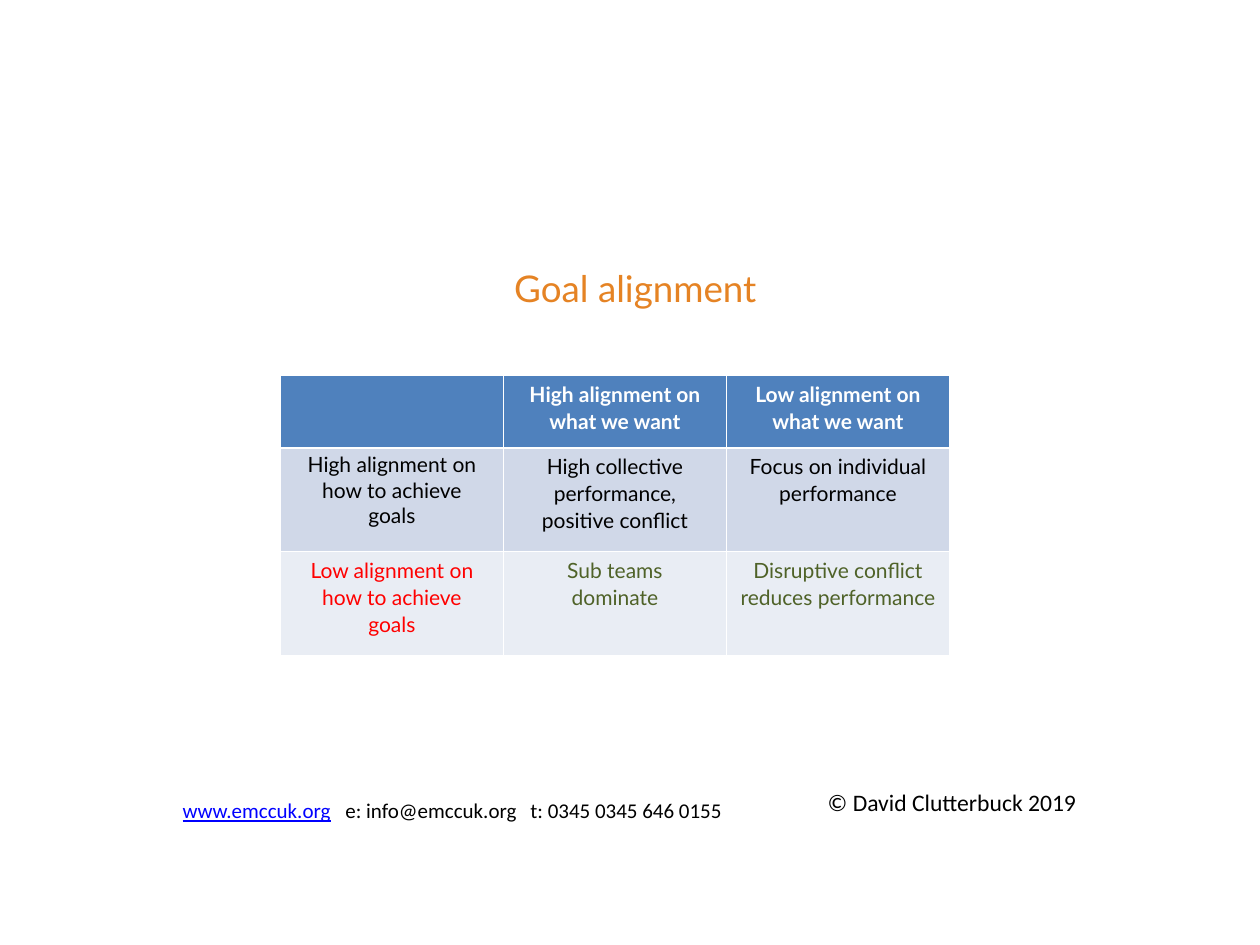
from lxml import etree
from pptx import Presentation
from pptx.dml.color import RGBColor
from pptx.enum.text import PP_ALIGN as Align
from pptx.oxml import parse_xml
from pptx.oxml.ns import nsdecls, qn
from pptx.util import Pt

TITLE = "Goal alignment"
COPYRIGHT = "© David Clutterbuck 2019"
WEBSITE = "www.emccuk.org"
CONTACTS = ["e: info@emccuk.org", "t: 0345 0345 646 0155"]
CONTACT_STOPS = [186, 397.5]

GOALS = [
    ["", "High alignment on\vwhat we want", "Low alignment on\vwhat we want"],
    ["High alignment on\vhow to achieve\vgoals",
     "High collective\vperformance,\vpositive conflict",
     "Focus on individual\vperformance"],
    ["Low alignment on\vhow to achieve\vgoals",
     "Sub teams\vdominate",
     "Disruptive conflict\vreduces performance"],
]
ROW_FILLS = ["4F81BD", "D0D8E8", "E9EDF4"]
TEXT_COLOURS = [["FFFFFF"] * 3, ["000000"] * 3, ["FF0000", "4F6228", "4F6228"]]
ROW_HEIGHTS = [82.8, 118.8, 118.8]
COLUMN_WIDTH = 254.9


def colour(value):
    return RGBColor.from_string(value)


def style(font, face, size, value, bold=False, underline=False):
    font.name, font.size = face, Pt(size)
    font.bold, font.underline = bold, underline
    font.color.rgb = colour(value)


def add_text(slide, left, top, width, height, text):
    frame = slide.shapes.add_textbox(Pt(left), Pt(top), Pt(width), Pt(height)).text_frame
    frame.word_wrap = True
    frame.text = text
    return frame.paragraphs[0]


def add_borders(cell, row):
    properties = cell._tc.get_or_add_tcPr()
    widths = {"lnL": 1, "lnR": 1, "lnT": 3 if row == 1 else 1, "lnB": 3 if row == 0 else 1}
    for position, (side, width) in enumerate(widths.items()):
        properties.insert(position, parse_xml(
            f'<a:{side} {nsdecls("a")} w="{Pt(width)}"><a:solidFill>'
            f'<a:srgbClr val="FFFFFF"/></a:solidFill></a:{side}>'))


def add_goals(slide):
    goals = slide.shapes.add_table(
        len(GOALS), len(GOALS[0]), Pt(320.4), Pt(429.1),
        Pt(COLUMN_WIDTH * len(GOALS[0])), Pt(sum(ROW_HEIGHTS))).table
    for column in goals.columns:
        column.width = Pt(COLUMN_WIDTH)
    for row, texts in enumerate(GOALS):
        goals.rows[row].height = Pt(ROW_HEIGHTS[row])
        for column, text in enumerate(texts):
            cell = goals.cell(row, column)
            cell.fill.solid()
            cell.fill.fore_color.rgb = colour(ROW_FILLS[row])
            cell.margin_left = cell.margin_right = Pt(10.8)
            cell.margin_top = cell.margin_bottom = Pt(5)
            add_borders(cell, row)
            cell.text_frame.text = text
            goal = cell.text_frame.paragraphs[0]
            goal.alignment = Align.CENTER
            goal.line_spacing = 1.0 if (row, column) == (1, 0) else 1.07
            goal.space_after = Pt(8)
            for run in goal.runs:
                style(run.font, "Lato", 24, TEXT_COLOURS[row][column], bold=row == 0)


def add_contacts(slide):
    contacts = add_text(slide, 201.6, 907.9, 714.2, 36, WEBSITE)
    stops = etree.SubElement(contacts._p.get_or_add_pPr(), qn("a:tabLst"))
    for stop in CONTACT_STOPS:
        etree.SubElement(stops, qn("a:tab"), pos=str(Pt(stop)), algn="l")
    style(contacts.runs[0].font, "Calibri", 24, "0000FF", underline=True)
    for contact in CONTACTS:
        run = contacts.add_run()
        run.text = "\t" + contact
        style(run.font, "Calibri", 24, "000000")


def main():
    deck = Presentation()
    deck.slide_width, deck.slide_height = Pt(1440), Pt(1080)
    slide = deck.slides.add_slide(deck.slide_layouts[6])
    rights = add_text(slide, 938.9, 896.4, 419, 40.3, COPYRIGHT)
    style(rights.runs[0].font, "Calibri", 27, "000000")
    add_contacts(slide)
    title = add_text(slide, 108, 300.2, 1236.2, 108, TITLE)
    title.alignment = Align.CENTER
    style(title.runs[0].font, "Lato", 42, "E58324")
    add_goals(slide)
    deck.save("out.pptx")


if __name__ == "__main__":
    main()
